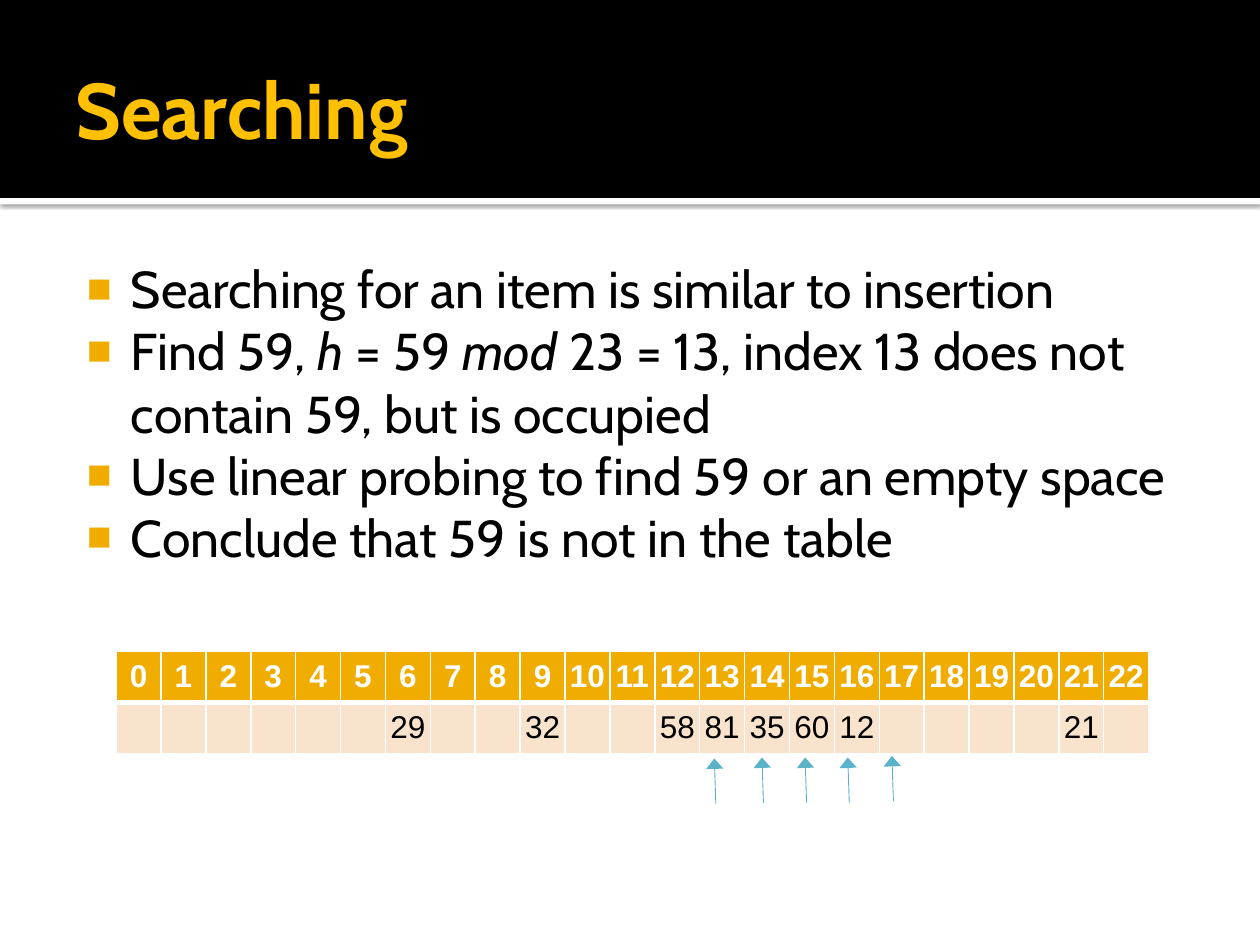
import pptx
import pptx.util
import pptx.dml.color
import pptx.enum.shapes
import pptx.enum.text
import pptx.oxml
import pptx.oxml.ns

Cm = pptx.util.Cm
Pt = pptx.util.Pt

COLORS = {
    "black": "000000",
    "white": "FFFFFF",
    "title": "FFC000",
    "accent": "F0AD00",
    "slot": "F9E3CC",
    "probe": "5BB3CA",
}
TABLE_SIZE = 23
STORED = {6: 29, 9: 32, 12: 58, 13: 81, 14: 35, 15: 60, 16: 12, 21: 21}
PROBES = [(14.43, 16.2), (15.39, 16.18), (16.26, 16.18), (17.12, 16.18), (18.01, 16.15)]
POINTS = [
    [("Searching for an item is similar to insertion", False)],
    [
        ("Find 59, ", False),
        ("h", True),
        (" = 59 ", False),
        ("mod", True),
        (" 23 = 13, index 13 does not contain 59, but is occupied", False),
    ],
    [("Use linear probing to find 59 or an empty space", False)],
    [("Conclude that 59 is not in the table", False)],
]


def rgb(name):
    return pptx.dml.color.RGBColor.from_string(COLORS[name])


def add_xml(parent, tag, body="", attributes=""):
    namespace = pptx.oxml.ns.nsdecls("a")
    parent.append(pptx.oxml.parse_xml(f"<a:{tag} {namespace} {attributes}>{body}</a:{tag}>"))


def color_xml(name, inner=""):
    return f'<a:srgbClr val="{COLORS[name]}">{inner}</a:srgbClr>'


class SlideBuilder:
    text_font = "Cabin"
    table_font = "Arial"

    def __init__(self, slide):
        self.slide = slide

    def format_font(self, font, name, size, color, bold=False):
        font.name = name
        font.size = Pt(size)
        font.bold = bold
        font.color.rgb = rgb(color)

    def set_insets(self, frame, left, top, right, bottom):
        frame.margin_left, frame.margin_top = Cm(left), Cm(top)
        frame.margin_right, frame.margin_bottom = Cm(right), Cm(bottom)

    def title(self, text, left, top, width, height):
        heading = self.slide.shapes.title
        heading.left, heading.top = Cm(left), Cm(top)
        heading.width, heading.height = Cm(width), Cm(height)
        frame = heading.text_frame
        frame.text = text
        frame.word_wrap = True
        frame.auto_size = pptx.enum.text.MSO_AUTO_SIZE.NONE
        frame.vertical_anchor = pptx.enum.text.MSO_ANCHOR.MIDDLE
        self.set_insets(frame, 0.25, 0.13, 0.13, 0.13)
        paragraph = frame.paragraphs[0]
        paragraph.alignment = pptx.enum.text.PP_ALIGN.LEFT
        self.format_font(paragraph.font, self.text_font, 45, "title", True)

    def band(self, top, height, color, shadow=False):
        strip = self.slide.shapes.add_shape(
            pptx.enum.shapes.MSO_SHAPE.RECTANGLE, 0, Cm(top), Cm(25.4), Cm(height)
        )
        strip.fill.solid()
        strip.fill.fore_color.rgb = rgb(color)
        strip.line.fill.background()
        strip.shadow.inherit = False
        if shadow:
            effects = strip._element.spPr.find(pptx.oxml.ns.qn("a:effectLst"))
            add_xml(
                effects,
                "outerShdw",
                color_xml("black", '<a:alpha val="60000"/>'),
                f'blurRad="{Pt(2.5)}" dist="{Pt(0.8)}" dir="5400000" rotWithShape="0"',
            )
        self.slide.shapes.title._element.addprevious(strip._element)

    def bullets(self, points, left, top, width, height):
        frame = self.slide.shapes.add_textbox(
            Cm(left), Cm(top), Cm(width), Cm(height)
        ).text_frame
        frame.word_wrap = True
        self.set_insets(frame, 0.15, 0.25, 0.25, 0.13)
        for number, point in enumerate(points):
            paragraph = frame.add_paragraph() if number else frame.paragraphs[0]
            self.format_font(paragraph.font, self.text_font, 29.6, "black")
            properties = paragraph._p.get_or_add_pPr()
            properties.set("marL", str(Cm(1.22)))
            properties.set("indent", str(-Cm(0.89)))
            bullet = pptx.oxml.parse_xml(
                f'<a:pPr {pptx.oxml.ns.nsdecls("a")}><a:buClr>{color_xml("accent")}</a:buClr>'
                '<a:buSzPct val="80000"/><a:buFont typeface="Arial"/><a:buChar char="■"/></a:pPr>'
            )
            for position, part in enumerate(list(bullet)):
                properties.insert(position, part)
            for text, italic in point:
                run = paragraph.add_run()
                run.text = text
                if italic:
                    run.font.italic = True

    def cell(self, cell, text, fill, color, bold, borders):
        cell.text = text
        cell.vertical_anchor = pptx.enum.text.MSO_ANCHOR.MIDDLE
        self.set_insets(cell, 0, 0, 0, 0)
        paragraph = cell.text_frame.paragraphs[0]
        paragraph.alignment = pptx.enum.text.PP_ALIGN.CENTER
        self.format_font(paragraph.font, self.table_font, 18, color, bold)
        for side, weight in zip("LRTB", borders):
            add_xml(
                cell._tc.get_or_add_tcPr(),
                f"ln{side}",
                f"<a:solidFill>{color_xml('white')}</a:solidFill>",
                f'w="{Pt(weight)}"',
            )
        cell.fill.solid()
        cell.fill.fore_color.rgb = rgb(fill)

    def hash_table(self, size, stored, left, top, width, row_height):
        table = self.slide.shapes.add_table(
            2, size, Cm(left), Cm(top), Cm(width), Cm(2 * row_height)
        ).table
        for row in table.rows:
            row.height = Cm(row_height)
        for index, column in enumerate(table.columns):
            column.width = Cm(width / size)
            self.cell(table.cell(0, index), str(index), "accent", "white", True, (1, 1, 1, 3))
            value = str(stored.get(index, ""))
            self.cell(table.cell(1, index), value, "slot", "black", False, (1, 1, 3, 1))

    def probe_arrow(self, x, bottom):
        arrow = self.slide.shapes.add_connector(
            pptx.enum.shapes.MSO_CONNECTOR.STRAIGHT,
            Cm(x), Cm(bottom), Cm(x - 0.03), Cm(bottom - 0.91),
        )
        arrow.line.color.rgb = rgb("probe")
        arrow.line.width = Pt(0.5)
        add_xml(arrow.line._get_or_add_ln(), "tailEnd", "", 'type="triangle" w="lg" len="med"')
        add_xml(arrow._element.spPr, "effectLst")


def main():
    deck = pptx.Presentation()
    deck.slide_width, deck.slide_height = Cm(25.4), Cm(19.05)
    builder = SlideBuilder(deck.slides.add_slide(deck.slide_layouts[5]))
    builder.band(3.99, 0.13, "white", shadow=True)
    builder.band(0, 3.99, "black")
    builder.hash_table(TABLE_SIZE, STORED, 2.34, 13.13, 20.82, 1.03)
    builder.title("Searching", 1.27, 0.43, 22.86, 3.48)
    builder.bullets(POINTS, 1.27, 4.93, 22.86, 6.93)
    for x, bottom in PROBES:
        builder.probe_arrow(x, bottom)
    deck.save("out.pptx")


if __name__ == "__main__":
    main()
